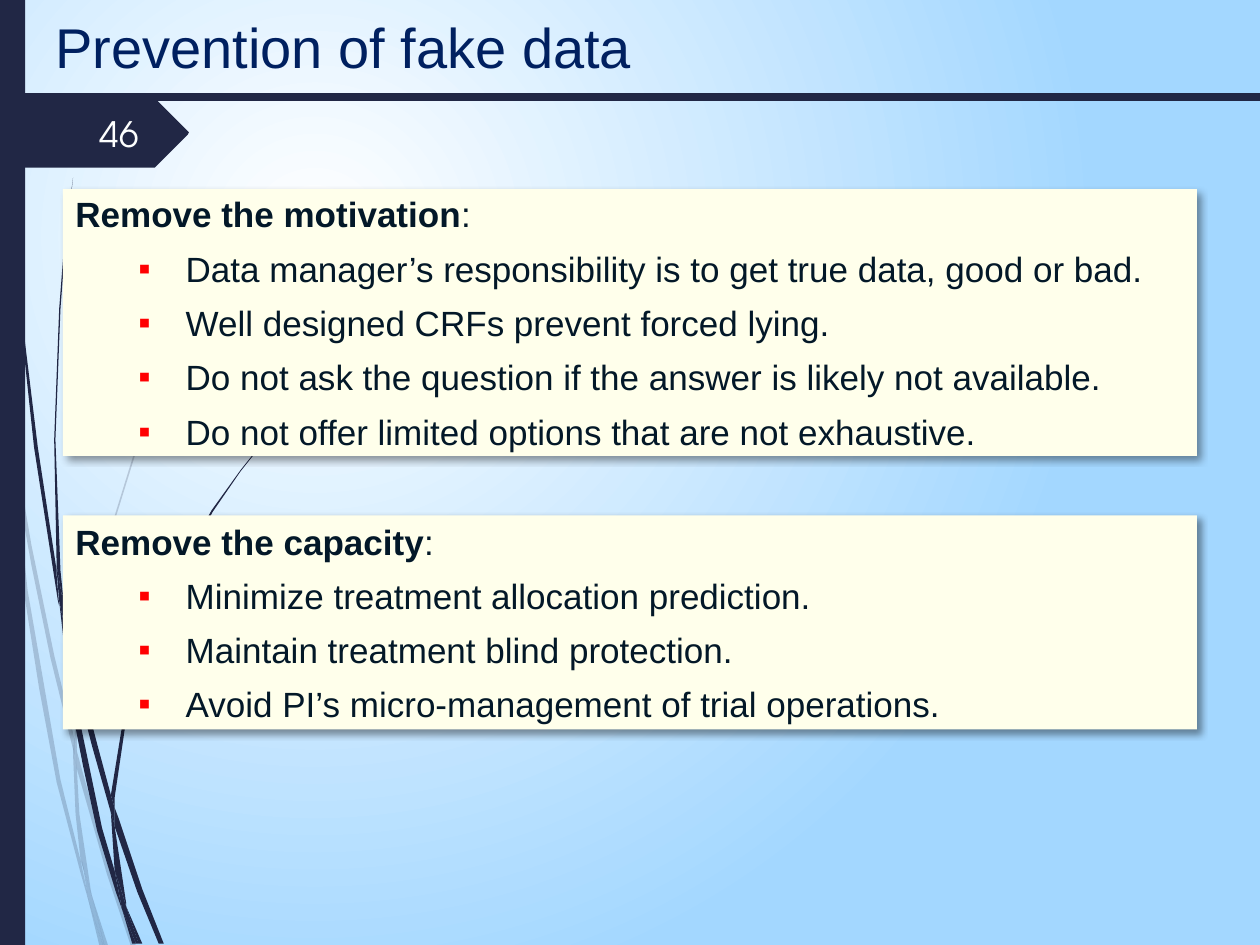
from pptx import Presentation
from pptx.dml.color import RGBColor
from pptx.enum.shapes import MSO_CONNECTOR, MSO_SHAPE
from pptx.enum.text import MSO_ANCHOR as Anchor, PP_ALIGN as Align
from pptx.oxml.ns import qn
from pptx.util import Pt
from lxml.etree import SubElement

NAVY = RGBColor(0x21, 0x27, 0x45)
TITLE_BLUE = RGBColor(0x00, 0x20, 0x60)
INK = RGBColor(0x03, 0x18, 0x28)
CREAM = RGBColor(0xFF, 0xFF, 0xEB)
RED = RGBColor(0xFF, 0x00, 0x00)
BLACK = RGBColor(0x00, 0x00, 0x00)
WHITE = RGBColor(0xFF, 0xFF, 0xFF)
OFF_WHITE = RGBColor(0xFE, 0xFF, 0xFF)
SKY = RGBColor(0xA3, 0xD7, 0xFF)

# Outlines below are drawn on a grid of 0.72 pt
GRID = Pt(0.72)

PALE_STRANDS = [
    [(8, 350), (6, 322), (0, 282), (0, 299), (7, 344)],
    [(40, 522), (59, 599), (59, 586), (43, 520), (25, 433), (10, 345), (12, 376), (25, 449)],
    [(64, 607), (61, 596), (61, 610), (85, 694), (104, 751), (108, 751), (88, 692)],
    [(83, 751), (86, 751), (73, 711)],
    [(64, 683), (48, 619), (22, 469), (12, 376), (8, 350), (19, 470), (31, 546),
     (45, 621), (64, 693), (70, 714), (69, 707)],
    [(58, 599), (60, 646), (64, 683), (67, 692), (73, 711), (72, 706), (63, 646),
     (61, 610), (61, 608)],
    [(61, 584), (76, 462), (111, 349), (159, 245), (187, 198), (201, 175), (217, 154),
     (217, 153), (201, 175), (186, 197), (158, 244), (110, 348), (75, 461), (59, 584),
     (59, 586), (61, 596)],
    [(70, 714), (79, 751), (82, 751)],
    [(61, 608), (61, 610), (61, 596), (59, 586), (58, 599)],
    [(67, 692), (65, 683), (69, 707), (70, 714), (82, 751), (83, 751), (73, 711)],
]
DARK_STRANDS = [
    [(5, 110), (14, 233), (27, 355), (46, 477), (47, 481), (45, 457), (45, 453), (30, 355),
     (15, 232), (6, 109), (4, 48), (3, 0), (2, 0), (3, 48)],
    [(73, 592), (88, 645), (88, 633), (88, 631), (77, 590), (62, 532), (50, 472),
     (53, 505), (62, 549)],
    [(94, 649), (91, 641), (91, 656), (109, 708), (126, 749), (130, 749), (113, 706)],
    [(91, 691), (81, 657), (60, 556), (53, 505), (47, 477), (56, 557), (66, 608),
     (77, 659), (92, 708), (97, 722), (96, 717)],
    [(50, 472), (48, 453), (44, 349), (48, 245), (52, 193), (58, 141), (51, 193), (47, 245),
     (43, 349), (45, 449), (49, 472)],
    [(110, 749), (113, 749), (100, 719)],
    [(47, 477), (53, 505), (50, 472), (49, 472), (45, 449), (45, 453)],
    [(91, 633), (103, 552), (131, 476), (169, 406), (191, 374), (203, 359), (216, 344),
     (215, 344), (203, 358), (191, 373), (168, 405), (129, 474), (101, 551), (88, 631),
     (91, 641)],
    [(97, 722), (105, 749), (108, 749)],
    [(88, 645), (91, 691), (96, 706), (100, 719), (100, 716), (91, 656), (90, 651)],
    [(88, 645), (90, 651), (91, 656), (91, 641), (88, 631), (88, 633)],
    [(96, 706), (91, 691), (96, 717), (97, 722), (108, 749), (110, 749), (100, 719)],
]
PAGE_ARROW = [(149, 107), (124, 132), (123, 133), (121, 133), (0, 133), (0, 78),
              (121, 78), (124, 79), (149, 104), (150, 105)]


def add_text(paragraph, text, size=20, color=INK, bold=False, font="Arial"):
    run = paragraph.add_run()
    run.text = text
    run.font.size = Pt(size)
    run.font.name = font
    run.font.bold = bold
    run.font.color.rgb = color


class SlideBuilder:
    def __init__(self, slide):
        self.slide = slide
        self.shapes = slide.shapes

    def background(self, center, edge):
        fill = self.slide.background.fill
        fill.gradient()
        for stop, color, position in zip(fill.gradient_stops, (center, edge), (0, 1)):
            stop.color.rgb = color
            stop.position = position
        gradient = self.slide.element.find(".//" + qn("a:gradFill"))
        gradient.remove(gradient.find(qn("a:lin")))
        circle = SubElement(gradient, qn("a:path"), path="circle")
        SubElement(circle, qn("a:fillToRect"), l="50000", t="50000", r="100000", b="100000")

    def paint(self, shape, color, opacity=100):
        shape.shadow.inherit = False
        shape.fill.solid()
        shape.fill.fore_color.rgb = color
        shape.line.fill.background()
        if opacity < 100:
            rgb = shape.fill._xPr.find(".//" + qn("a:srgbClr"))
            SubElement(rgb, qn("a:alpha"), val=str(opacity * 1000))

    def outline(self, points, color, opacity=100):
        builder = self.shapes.build_freeform(*points[0], scale=GRID)
        builder.add_line_segments(points[1:], close=True)
        self.paint(builder.convert_to_shape(), color, opacity)

    def rectangle(self, left, top, width, height, color):
        shape = self.shapes.add_shape(MSO_SHAPE.RECTANGLE, Pt(left), Pt(top), Pt(width), Pt(height))
        self.paint(shape, color)
        return shape

    def rule(self, left, right, top, color, weight):
        line = self.shapes.add_connector(MSO_CONNECTOR.STRAIGHT, Pt(left), Pt(top), Pt(right), Pt(top))
        line.line.color.rgb = color
        line.line.width = Pt(weight)
        SubElement(line._element.spPr, qn("a:effectLst"))

    def title(self, text, left, top, width, height):
        title = self.shapes.title
        title.left, title.top, title.width, title.height = Pt(left), Pt(top), Pt(width), Pt(height)
        title.text_frame.vertical_anchor = Anchor.MIDDLE
        paragraph = title.text_frame.paragraphs[0]
        paragraph.alignment = Align.LEFT
        add_text(paragraph, text, size=32, color=TITLE_BLUE)

    def page_number(self, text, left, top, width, height):
        frame = self.shapes.add_textbox(Pt(left), Pt(top), Pt(width), Pt(height)).text_frame
        frame.word_wrap = True
        frame.vertical_anchor = Anchor.MIDDLE
        frame.paragraphs[0].alignment = Align.RIGHT
        add_text(frame.paragraphs[0], text, color=OFF_WHITE, font="TeX Gyre Adventor")

    def drop_shadow(self, shape):
        effects = shape._element.spPr.find(qn("a:effectLst"))
        shadow = SubElement(effects, qn("a:outerShdw"), blurRad=str(Pt(4)), dist=str(Pt(3)),
                            dir="2700000", algn="tl", rotWithShape="0")
        rgb = SubElement(shadow, qn("a:srgbClr"), val=str(BLACK))
        SubElement(rgb, qn("a:alpha"), val="40000")

    def bullet(self, paragraph):
        properties = paragraph._p.get_or_add_pPr()
        properties.set("marL", str(Pt(63)))
        properties.set("indent", str(-Pt(27)))
        color = SubElement(properties, qn("a:buClr"))
        SubElement(color, qn("a:srgbClr"), val=str(RED))
        SubElement(properties, qn("a:buFont"), typeface="Arial")
        SubElement(properties, qn("a:buChar"), char="▪")

    def panel(self, top, height, heading, items):
        shape = self.rectangle(36, top, 648, height, CREAM)
        self.drop_shadow(shape)
        frame = shape.text_frame
        frame.word_wrap = True
        frame.vertical_anchor = Anchor.MIDDLE
        paragraph = frame.paragraphs[0]
        paragraph.alignment = Align.LEFT
        paragraph.space_before = Pt(6)
        add_text(paragraph, heading, bold=True)
        add_text(paragraph, ":")
        for item in items:
            paragraph = frame.add_paragraph()
            paragraph.alignment = Align.LEFT
            paragraph.space_before = Pt(7)
            self.bullet(paragraph)
            add_text(paragraph, item)


def main():
    presentation = Presentation()
    presentation.slide_width, presentation.slide_height = Pt(720), Pt(540)
    builder = SlideBuilder(presentation.slides.add_slide(presentation.slide_layouts[5]))

    # Backdrop with grass strands and side bar
    builder.background(WHITE, SKY)
    for strands, opacity in ((PALE_STRANDS, 20), (DARK_STRANDS, 100)):
        for strand in strands:
            builder.outline(strand, NAVY, opacity)
    builder.rectangle(0, 0, 14.4, 540, NAVY)

    # Header
    builder.outline(PAGE_ARROW, NAVY)
    builder.page_number("46", 40.3, 61.9, 46, 28.8)
    builder.title("Prevention of fake data", 24.5, 3.6, 686, 46)
    builder.rule(6.5, 720, 55.4, NAVY, 4.5)

    # Panels
    builder.panel(108, 152.6, "Remove the motivation", [
        "Data manager’s responsibility is to get true data, good or bad.",
        "Well designed CRFs prevent forced lying.",
        "Do not ask the question if the answer is likely not available.",
        "Do not offer limited options that are not exhaustive.",
    ])
    builder.panel(294.5, 122.4, "Remove the capacity", [
        "Minimize treatment allocation prediction.",
        "Maintain treatment blind protection.",
        "Avoid PI’s micro-management of trial operations.",
    ])
    presentation.save("out.pptx")


if __name__ == "__main__":
    main()
